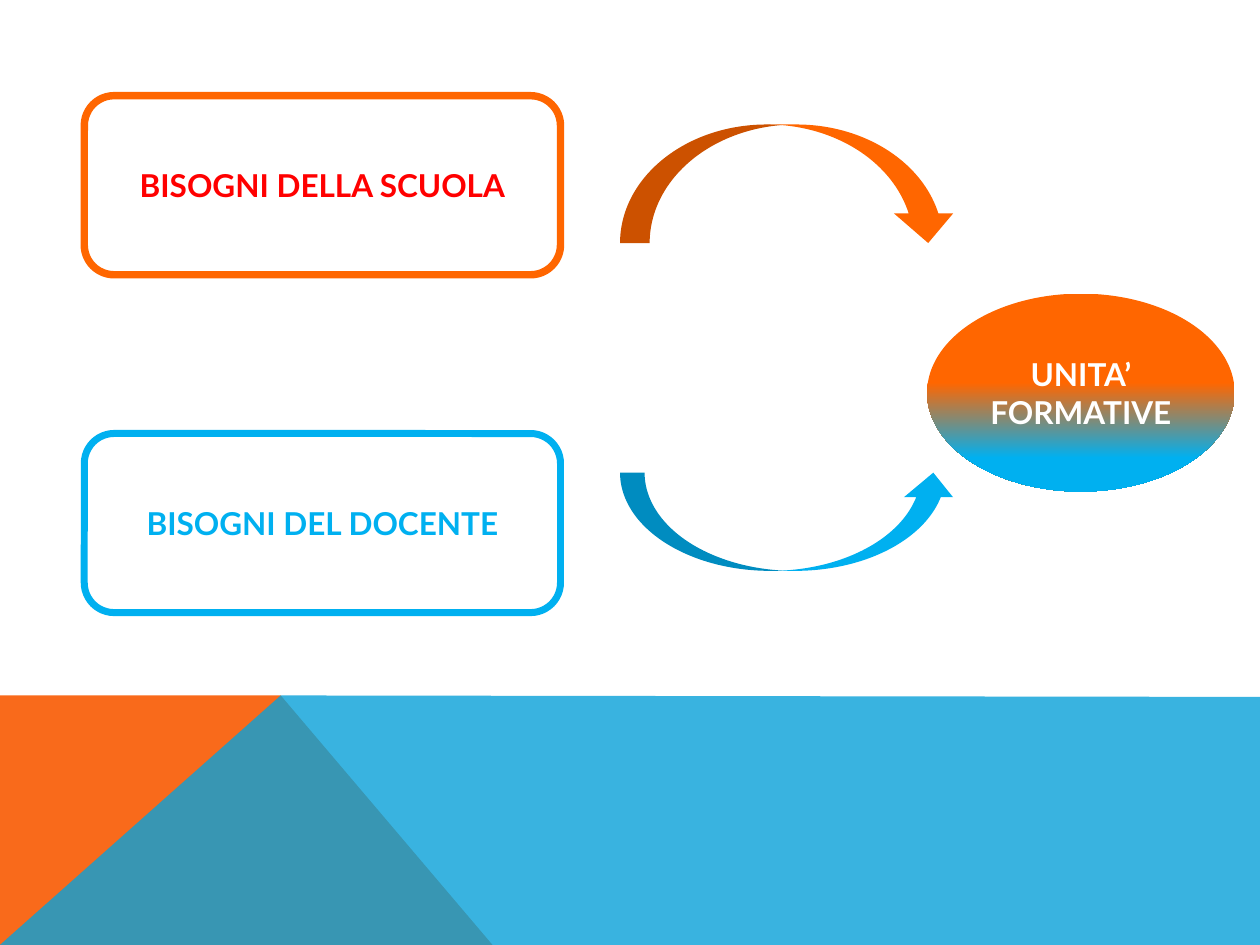
import pptx
import pptx.dml.color
import pptx.enum.shapes
import pptx.enum.text
import pptx.oxml
import pptx.oxml.ns
import pptx.util
from pptx.util import Cm

SHAPES = pptx.enum.shapes.MSO_SHAPE
ORANGE, BLUE, WHITE = "FF6600", "00B0F0", "FFFFFF"
WIDTH, HEIGHT = 25.4, 19.05
BAND_TOP, PEAK = 14.02, 5.66

# Footer band: points in cm, colour, opacity in percent
BAND = [
    ([(0, HEIGHT), (0, BAND_TOP), (PEAK, BAND_TOP), (9.93, HEIGHT)], "F96A1B", 100),
    ([(0, HEIGHT), (PEAK, BAND_TOP), (WIDTH, 14.05), (WIDTH, HEIGHT)], "08A1D9", 80),
]
# Needs: text, top, fill, line colour, line width, text colour
NEEDS = [
    ("BISOGNI DELLA SCUOLA", 1.93, WHITE, ORANGE, 4.25, "FF0000"),
    ("BISOGNI DEL DOCENTE", 8.74, None, BLUE, 4, BLUE),
]
# Arrows: top, height, colour, flipped
ARROWS = [(2.51, 2.39, ORANGE, False), (9.53, 1.98, BLUE, True)]
RESULT = "UNITA’ FORMATIVE"
RESULT_STOPS = [(0, ORANGE), (45, ORANGE), (83, BLUE), (100, BLUE)]
FONT = {"name": "Lato", "size": pptx.util.Pt(18), "bold": True}


def rgb(value):
    return pptx.dml.color.RGBColor.from_string(value)


def paint(shape, fill=None, line=None, width=0):
    shape.shadow.inherit = False
    if fill:
        shape.fill.solid()
        shape.fill.fore_color.rgb = rgb(fill)
    else:
        shape.fill.background()
    if line:
        shape.line.color.rgb = rgb(line)
        shape.line.width = pptx.util.Pt(width)
    else:
        shape.line.fill.background()


def add_shape(kind, *place):
    return page.shapes.add_shape(kind, *map(Cm, place))


def write(shape, text, color):
    frame = shape.text_frame
    frame.word_wrap = True
    frame.vertical_anchor = pptx.enum.text.MSO_ANCHOR.MIDDLE
    para = frame.paragraphs[0]
    para.alignment = pptx.enum.text.PP_ALIGN.CENTER
    span = para.add_run()
    span.text = text
    for name, value in FONT.items():
        setattr(span.font, name, value)
    span.font.color.rgb = rgb(color)


def set_gradient(shape, stops):
    shape.fill.gradient()
    shape.fill.gradient_angle = 270  # counter-clockwise: top to bottom
    stop_list = shape.fill._xPr.find(".//" + pptx.oxml.ns.qn("a:gsLst"))
    stop_list.clear()
    for position, color in stops:
        stop_list.append(pptx.oxml.parse_xml(
            f'<a:gs {pptx.oxml.ns.nsdecls("a")} pos="{position * 1000}">'
            f'<a:srgbClr val="{color}"/></a:gs>'))


deck = pptx.Presentation()
deck.slide_width, deck.slide_height = Cm(WIDTH), Cm(HEIGHT)
page = deck.slides.add_slide(deck.slide_layouts[6])

# Footer band
for points, color, opacity in BAND:
    first, *rest = [(Cm(x), Cm(y)) for x, y in points]
    builder = page.shapes.build_freeform(*first)
    builder.add_line_segments(rest, close=True)
    area = builder.convert_to_shape()
    paint(area, color)
    if opacity < 100:
        tint = area.fill._xPr.find(".//" + pptx.oxml.ns.qn("a:srgbClr"))
        tint.append(pptx.oxml.parse_xml(
            f'<a:alpha {pptx.oxml.ns.nsdecls("a")} val="{opacity * 1000}"/>'))

# Boxes with the needs
for text, top, fill, line, width, color in NEEDS:
    box = add_shape(SHAPES.ROUNDED_RECTANGLE, 1.7, top, 9.6, 3.61)
    paint(box, fill, line, width)
    write(box, text, color)

# Curved arrows towards the result
for top, height, color, flipped in ARROWS:
    arrow = add_shape(SHAPES.CURVED_DOWN_ARROW, 12.5, top, 6.81, height)
    paint(arrow, color)
    if flipped:
        arrow._element.spPr.xfrm.set("flipV", "1")

# Result
result = add_shape(SHAPES.OVAL, 18.69, 5.92, 6.2, 3.99)
paint(result)
set_gradient(result, RESULT_STOPS)
write(result, RESULT, WHITE)

deck.save("out.pptx")
